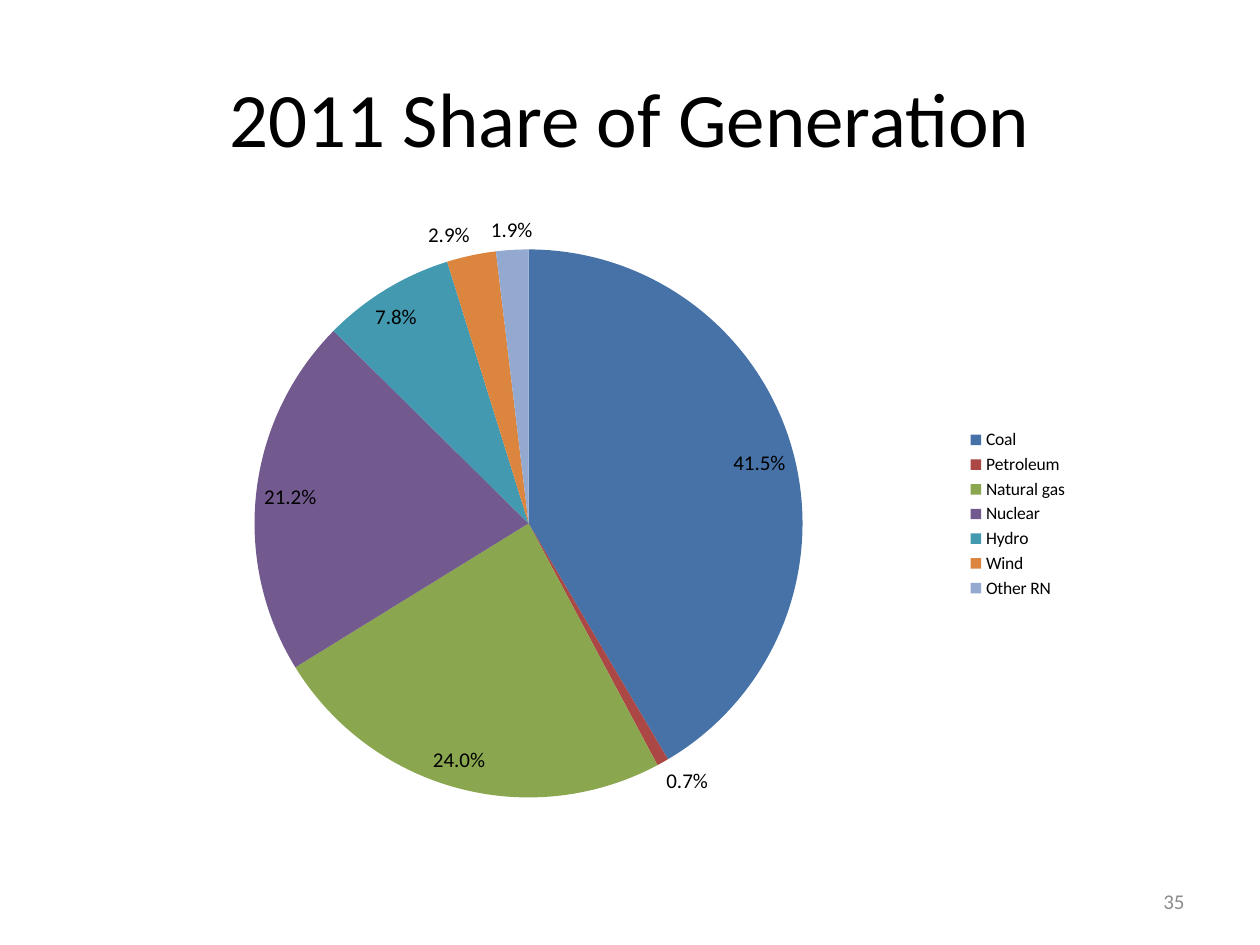
import pptx
import pptx.chart.data
import pptx.dml.color
import pptx.enum.chart
import pptx.enum.text
import pptx.oxml
import pptx.oxml.ns
import pptx.util
from pptx.util import Inches

# Category, share of generation, slice colour
SHARES = [
    ("Coal", 0.415, "4672A8"),
    ("Petroleum", 0.007, "AB4744"),
    ("Natural gas", 0.24, "8AA64F"),
    ("Nuclear", 0.212, "725A8F"),
    ("Hydro", 0.078, "4299B0"),
    ("Wind", 0.029, "DC853E"),
    ("Other RN", 0.019, "93A9CF"),
]


def colour(value):
    return pptx.dml.color.RGBColor.from_string(value)


class SlideBuilder:
    font_name = "Calibri"
    text_colour = "000000"

    def __init__(self, deck):
        self.slide = deck.slides.add_slide(deck.slide_layouts[6])

    def style_font(self, font, size, text_colour=None):
        font.name = self.font_name
        font.size = pptx.util.Pt(size)
        font.color.rgb = colour(text_colour or self.text_colour)

    def text(self, words, left, top, width, height, size, align, text_colour=None):
        box = self.slide.shapes.add_textbox(
            Inches(left), Inches(top), Inches(width), Inches(height))
        frame = box.text_frame
        frame.word_wrap = True
        frame.vertical_anchor = pptx.enum.text.MSO_ANCHOR.MIDDLE
        para = frame.paragraphs[0]
        para.alignment = align
        span = para.add_run()
        span.text = words
        self.style_font(span.font, size, text_colour)

    def pie(self, shares, left, top, width, height, plot_layout):
        data = pptx.chart.data.CategoryChartData(number_format="0.0%")
        data.categories = [name for name, _, _ in shares]
        data.add_series("Series 1", [share for _, share, _ in shares])
        chart = self.slide.shapes.add_chart(
            pptx.enum.chart.XL_CHART_TYPE.PIE, Inches(left), Inches(top),
            Inches(width), Inches(height), data).chart
        chart.has_title = False
        self.style_font(chart.font, 10)

        # Legend
        chart.has_legend = True
        chart.legend.position = pptx.enum.chart.XL_LEGEND_POSITION.RIGHT
        chart.legend.include_in_layout = False

        # Slices and their labels
        chart.plots[0].vary_by_categories = True
        series = chart.plots[0].series[0]
        for index, (_, _, fill) in enumerate(shares):
            slice_format = series.points[index].format
            slice_format.fill.solid()
            slice_format.fill.fore_color.rgb = colour(fill)
        labels = series.data_labels
        labels.show_value = True
        labels.show_percentage = False
        labels.number_format = "0.0%"
        labels.number_format_is_linked = False
        labels.position = pptx.enum.chart.XL_LABEL_POSITION.BEST_FIT
        self.style_font(labels.font, 12)
        self.place_plot(chart, plot_layout)

    def place_plot(self, chart, plot_layout):
        plot_area = chart.element.find(".//" + pptx.oxml.ns.qn("c:plotArea"))
        for old in plot_area.findall(pptx.oxml.ns.qn("c:layout")):
            plot_area.remove(old)
        modes = '<c:xMode val="edge"/><c:yMode val="edge"/>'
        sizes = "".join(f'<c:{key} val="{value}"/>'
                        for key, value in zip("xywh", plot_layout))
        plot_area.insert(0, pptx.oxml.parse_xml(
            f'<c:layout {pptx.oxml.ns.nsdecls("c")}><c:manualLayout>'
            f'<c:layoutTarget val="inner"/>{modes}{sizes}'
            '</c:manualLayout></c:layout>'))


def main():
    deck = pptx.Presentation()
    deck.slide_width, deck.slide_height = Inches(10), Inches(7.5)
    page = SlideBuilder(deck)
    align = pptx.enum.text.PP_ALIGN

    # Title
    page.text("2011 Share of Generation", 0.5, 0.3, 9, 1.25, 44, align.CENTER)

    # Pie chart; the plot is placed by fractions of the chart
    page.pie(SHARES, 0.75, 1.58, 7.83, 5, (0.16, 0.08, 0.56, 0.87))

    # Slide number
    page.text("35", 7.17, 6.95, 2.33, 0.4, 12, align.RIGHT, "8C8C8C")

    deck.save("out.pptx")


if __name__ == "__main__":
    main()
